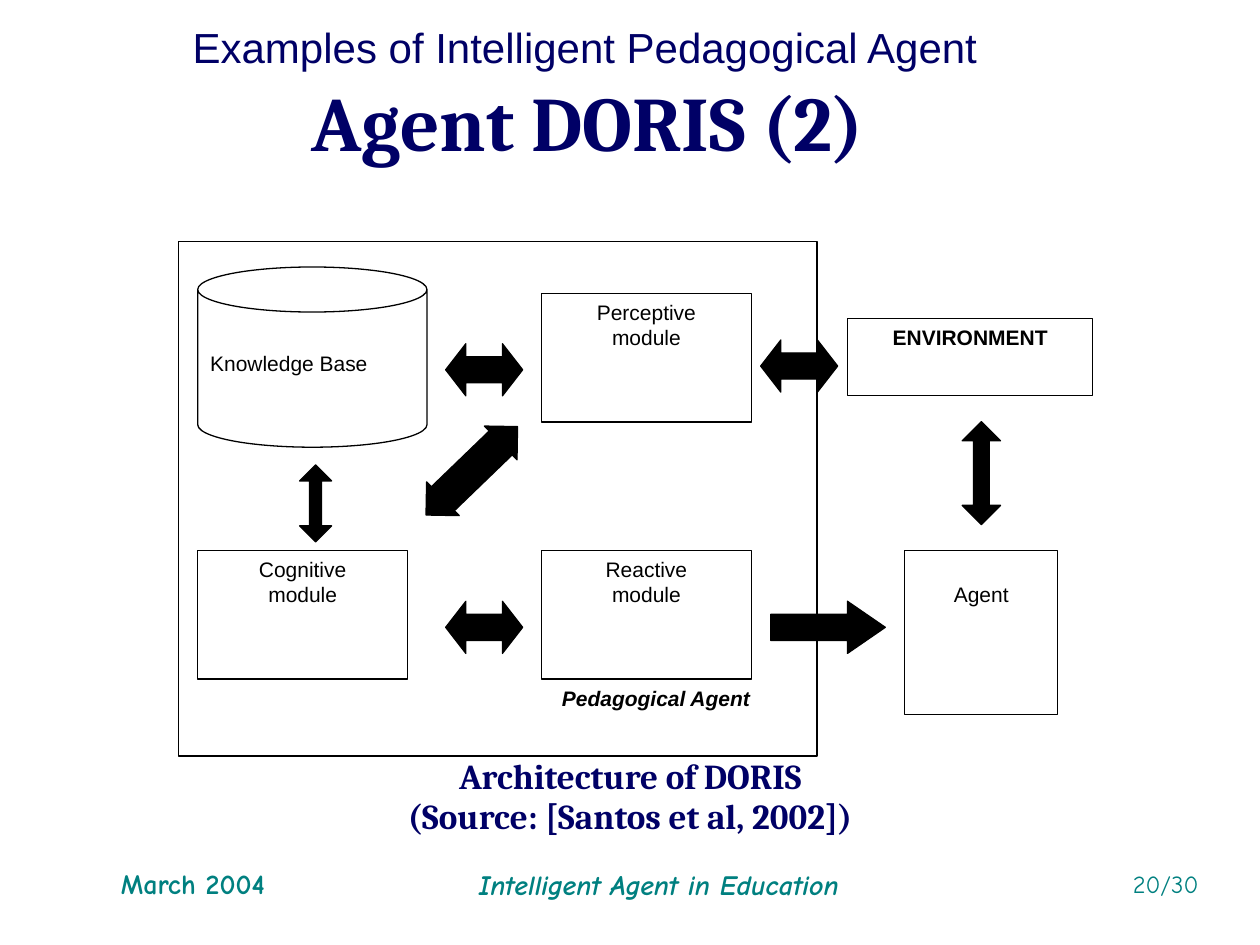
from pptx import Presentation
from pptx.dml.color import RGBColor
from pptx.enum.shapes import MSO_SHAPE
from pptx.enum.text import MSO_ANCHOR, PP_ALIGN
from pptx.util import Pt

RECT, CAN = MSO_SHAPE.RECTANGLE, MSO_SHAPE.CAN
TWO_WAY, ONE_WAY = MSO_SHAPE.LEFT_RIGHT_ARROW, MSO_SHAPE.RIGHT_ARROW
VERTICAL = MSO_SHAPE.UP_DOWN_ARROW
LEFT, CENTER, RIGHT = PP_ALIGN.LEFT, PP_ALIGN.CENTER, PP_ALIGN.RIGHT
TOP, MIDDLE = MSO_ANCHOR.TOP, MSO_ANCHOR.MIDDLE
COLORS = {"navy": "000066", "teal": "008080", "black": "000000", "white": "FFFFFF"}


def write(box, text, size, font, color, align=CENTER, bold=False, italic=False):
    frame = box.text_frame
    frame.word_wrap = True
    frame.vertical_anchor = TOP
    frame.text = text
    for para in frame.paragraphs:
        para.alignment = align
        for span in para.runs:
            span.font.size = Pt(size)
            span.font.name = font
            span.font.bold = bold
            span.font.italic = italic
            span.font.color.rgb = RGBColor.from_string(COLORS[color])
    return frame


def draw(kind, place, fill):
    shape = page.shapes.add_shape(kind, *map(Pt, place))
    shape.shadow.inherit = False
    shape.fill.solid()
    shape.fill.fore_color.rgb = RGBColor.from_string(COLORS[fill])
    shape.line.color.rgb = RGBColor.from_string(COLORS["black"])
    shape.line.width = Pt(0.75)
    return shape


deck = Presentation()
deck.slide_width, deck.slide_height = Pt(720), Pt(540)
page = deck.slides.add_slide(deck.slide_layouts[6])

draw(RECT, (102, 138.2, 365, 293.8), "white")
draw(CAN, (113, 152.6, 131, 103), "white").adjustments[0] = 0.25

modules = [
    ("Cognitive\nmodule", (113, 314.5, 120, 73.5), False),
    ("Perceptive\nmodule", (309.4, 167.6, 120, 73.5), False),
    ("Reactive\nmodule", (309.4, 314.5, 120, 73.5), False),
    ("ENVIRONMENT", (484.4, 182, 140, 44), True),
    ("Agent", (517, 314.5, 87.4, 94), False),
]
for label, place, bold in modules:
    frame = write(draw(RECT, place, "white"), label, 12, "Arial", "black", bold=bold)
    if label == "Agent":
        frame.margin_top = Pt(18)

arrows = [
    (TWO_WAY, (254.7, 196.4, 44, 29.8), 0.388, 0),
    (TWO_WAY, (254.7, 343.6, 44, 29.8), 0.388, 0),
    (TWO_WAY, (434.7, 194.3, 44, 29.8), 0.388, 0),
    (ONE_WAY, (440.4, 343.6, 65.5, 29.8), 0.726, 0),
    (VERTICAL, (171.2, 265.7, 18.3, 44), 0.375, 0),
    (VERTICAL, (549.8, 241, 21.9, 58.8), 0.411, 0),
    (VERTICAL, (256.2, 232.7, 26.8, 72.7), 0.707, 46),
]
for kind, place, head, angle in arrows:
    arrow = draw(kind, place, "black")
    arrow.adjustments[0] = 0.5
    arrow.adjustments[1] = head
    arrow.rotation = angle

texts = [
    ("Examples of Intelligent Pedagogical Agent", (103, 8.6, 464.4, 36),
     24, "Arial", "navy", LEFT, False, False),
    ("Agent DORIS (2)", (30.2, 23.8, 612, 90), 44, "Cambria", "navy", CENTER, True, False),
    ("Knowledge Base", (113, 196.6, 120, 44), 12, "Arial", "black", LEFT, False, False),
    ("Pedagogical Agent", (309.4, 388, 131, 44), 12, "Arial", "black", CENTER, True, True),
    ("Architecture of DORIS\n(Source: [Santos et al, 2002])", (30.2, 432, 660, 54),
     20, "Cambria", "navy", CENTER, True, False),
    ("March 2004", (35.3, 491.8, 149.8, 36), 16, "Comic Neue", "teal", CENTER, True, False),
    ("Intelligent Agent in Education", (247.7, 492.5, 257.8, 36),
     16, "Comic Neue", "teal", CENTER, True, True),
    ("20/30", (542.2, 493.2, 149.8, 36), 14, "Comic Neue", "teal", RIGHT, False, False),
]
for text, place, *style in texts:
    frame = write(page.shapes.add_textbox(*map(Pt, place)), text, *style)
    if text.startswith("Examples"):
        frame.word_wrap = False
    elif text.startswith("Agent"):
        frame.vertical_anchor = MIDDLE
    elif text.startswith("Architecture"):
        for para in frame.paragraphs:
            para.line_spacing = 0.8
        frame.paragraphs[1].space_before = Pt(4)

deck.save("out.pptx")
